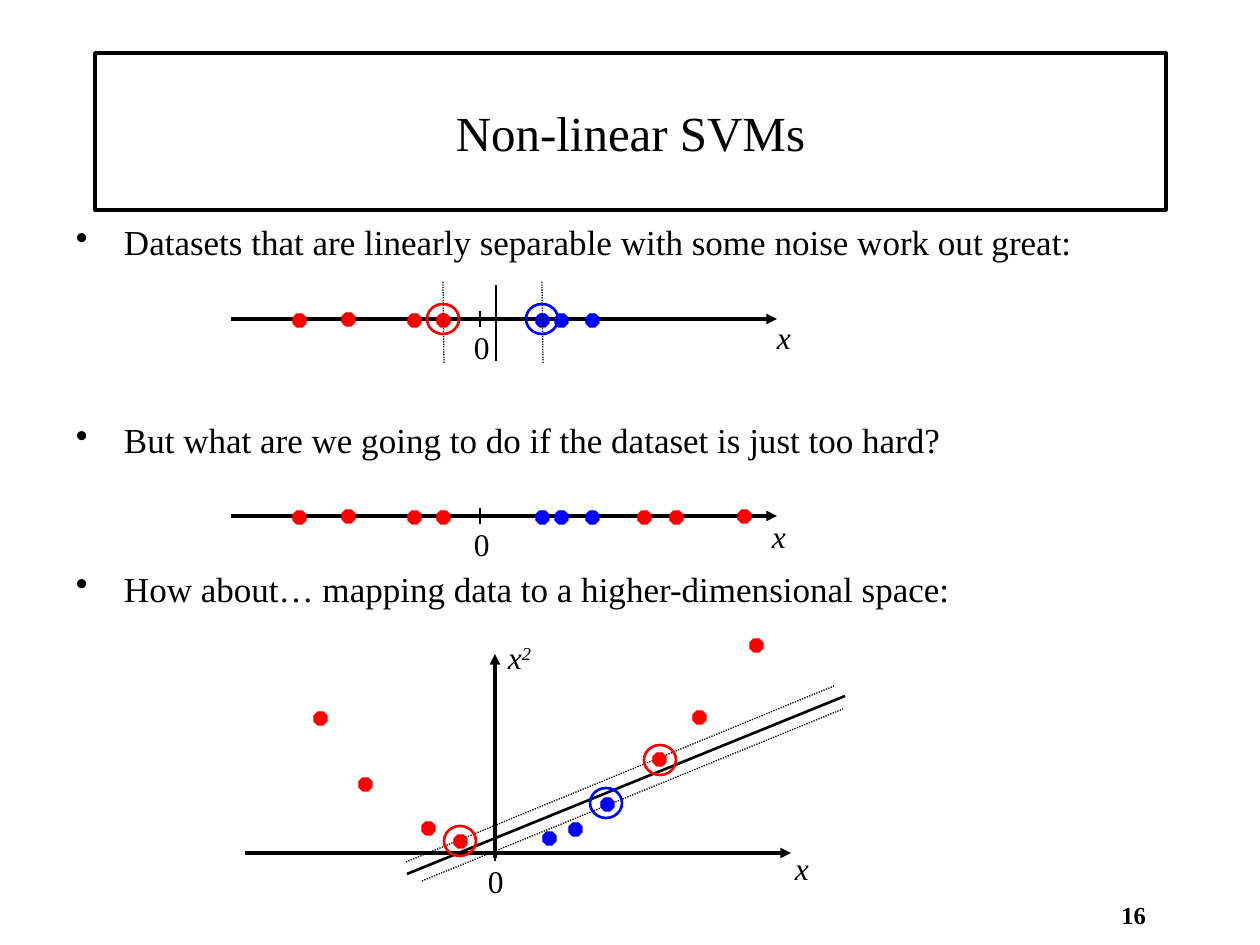
from lxml.etree import SubElement
from pptx import Presentation
from pptx.dml.color import RGBColor
from pptx.enum.dml import MSO_LINE
from pptx.enum.shapes import MSO_CONNECTOR, MSO_SHAPE
from pptx.enum.text import MSO_ANCHOR, PP_ALIGN
from pptx.oxml.ns import qn
from pptx.util import Pt

BLACK = RGBColor(0, 0, 0)
WHITE = RGBColor(255, 255, 255)
RED = RGBColor(255, 0, 0)
BLUE = RGBColor(0, 0, 255)
FONT = "Times New Roman"
SCALE = 914400 / 126
AXIS = 36


def px(n):
    return round(n * SCALE)


def text(slide, words, box, size=18, bold=False, italic=False, sup="",
         align=PP_ALIGN.LEFT, anchor=MSO_ANCHOR.TOP, inset=(13, 6),
         gaps=None, fill=None, edge=None):
    shape = slide.shapes.add_textbox(*map(px, box))
    if fill is not None:
        shape.fill.solid()
        shape.fill.fore_color.rgb = fill
    if edge:
        shape.line.color.rgb = BLACK
        shape.line.width = Pt(edge)
    frame = shape.text_frame
    frame.word_wrap = True
    frame.vertical_anchor = anchor
    frame.margin_left = frame.margin_right = px(inset[0])
    frame.margin_top = frame.margin_bottom = px(inset[1])
    for i, line in enumerate(words.split("\n")):
        para = frame.add_paragraph() if i else frame.paragraphs[0]
        para.alignment = align
        if gaps:
            para.space_before = Pt(gaps[i])
            props = para._p.get_or_add_pPr()
            props.set("marL", str(px(48)))
            props.set("indent", str(-px(48)))
            SubElement(props, qn("a:buChar"), char="•")
        for part, raised in ((line, False), (sup, True)):
            if not part:
                continue
            run = para.add_run()
            run.text = part
            font = run.font
            font.name, font.size = FONT, Pt(size)
            font.bold, font.italic = bold, italic
            font.color.rgb = BLACK
            if raised:
                font._element.set("baseline", "30000")


def stroke(slide, box, ends, width=0.75, arrow=False, dots=False):
    left, top = box[:2]
    x1, y1, x2, y2 = ends
    line = slide.shapes.add_connector(
        MSO_CONNECTOR.STRAIGHT,
        px(left + x1), px(top + y1), px(left + x2), px(top + y2))
    line.line.color.rgb = BLACK
    line.line.width = Pt(width)
    if dots:
        line.line.dash_style = MSO_LINE.ROUND_DOT
    if arrow:
        SubElement(line.line._get_or_add_ln(), qn("a:tailEnd"), type="triangle")
    SubElement(line._element.spPr, qn("a:effectLst"))


def mark(slide, box, spot, color, ring=False):
    wide, high = (32, 30) if ring else (13, 13)
    kind = MSO_SHAPE.OVAL if ring else MSO_SHAPE.OCTAGON
    shape = slide.shapes.add_shape(
        kind, px(box[0] + spot[0] - wide // 2),
        px(box[1] + spot[1] - high // 2), px(wide), px(high))
    shape.shadow.inherit = False
    shape.line.color.rgb = color
    shape.line.width = Pt(1.5 if ring else 0.75)
    if ring:
        shape.fill.background()
    else:
        shape.fill.solid()
        shape.fill.fore_color.rgb = color


def axis(slide, box, y, zero, name):
    left, top, wide = box[:3]
    stroke(slide, box, (0, y, wide, y), 2, arrow=True)
    stroke(slide, box, (zero, y - 8, zero, y + 8))
    text(slide, "0", (left + 230, top + y + 3, 48, 50))
    text(slide, "x", (left + name[0], top + name[1], 63, 50), italic=True)


def row(slide, box, name, reds, blues):
    axis(slide, box, AXIS, 249, name)
    for spots, color in ((reds, RED), (blues, BLUE)):
        for x in spots:
            y = AXIS if x in (117, 513) else AXIS + 1
            mark(slide, box, (x, y), color)


def margin(slide, box):
    stroke(slide, box, (265, 2, 265, 78), 1.5)
    for x, color in ((212, RED), (311, BLUE)):
        stroke(slide, box, (x + 1, 80, x, -2), dots=True)
        mark(slide, box, (x, AXIS), color, ring=True)


def plane(slide, box):
    axis(slide, box, 214, 250, (537, 204))
    stroke(slide, box, (250, 219, 250, 15), 2, arrow=True)
    text(slide, "x", (box[0] + 250, box[1] - 7, 63, 50), italic=True, sup="2")
    stroke(slide, box, (162, 235, 600, 57), 1.5)
    for ends in ((161, 223, 589, 47), (177, 242, 598, 70)):
        stroke(slide, box, ends, dots=True)
    reds = ((75, 79), (120, 145), (183, 189), (215, 202),
            (414, 120), (454, 78), (511, 6))
    blues = ((304, 199), (330, 190), (362, 165))
    for spots, color in ((reds, RED), (blues, BLUE)):
        for spot in spots:
            mark(slide, box, spot, color)
    for spot, color in (((415, 121), RED), ((361, 164), BLUE), ((215, 202), RED)):
        mark(slide, box, spot, color, ring=True)


def main():
    deck = Presentation()
    deck.slide_width, deck.slide_height = px(1260), px(945)
    slide = deck.slides.add_slide(deck.slide_layouts[6])
    text(slide, "16", (1113, 900, 41, 45), size=14, bold=True,
         align=PP_ALIGN.CENTER, inset=(0, 0), fill=WHITE)
    text(slide, "Non-linear SVMs", (95, 53, 1071, 157), size=28,
         align=PP_ALIGN.CENTER, anchor=MSO_ANCHOR.MIDDLE, edge=2)
    text(slide, "Datasets that are linearly separable with some noise work out great:\n"
         "But what are we going to do if the dataset is just too hard?\n"
         "How about… mapping data to a higher-dimensional space:",
         (63, 221, 1134, 682), size=20, inset=(13, 0), gaps=(0, 89, 61))
    near, blues, far = (68, 117, 183, 212), (311, 330, 361), (413, 445, 513)
    top = (231, 283, 546, 82)
    row(slide, top, (533, 29), near, blues)
    margin(slide, top)
    row(slide, (231, 480, 546, 82), (528, 31), near + far, blues)
    plane(slide, (245, 639, 546, 242))
    deck.save("out.pptx")


if __name__ == "__main__":
    main()
